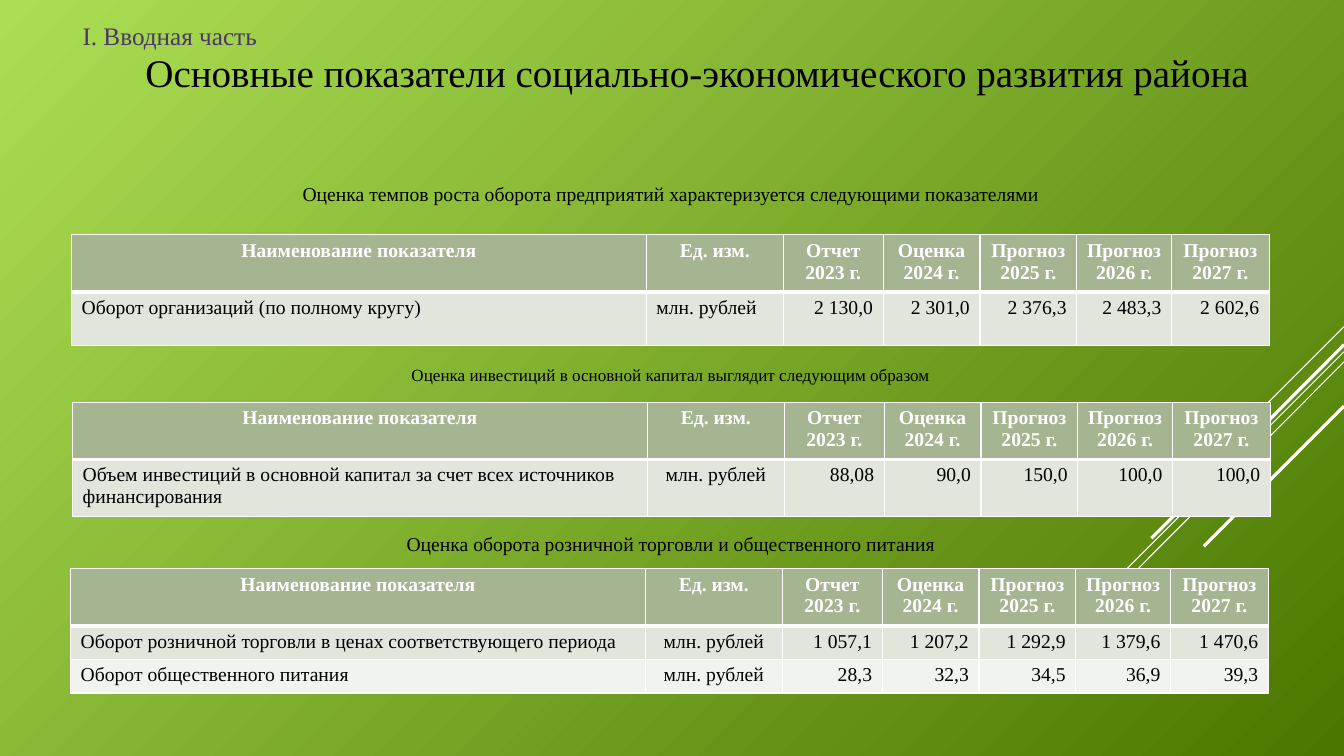
"""Build the slide with the main social and economic indicators of the district."""
from lxml.etree import SubElement
from pptx import Presentation
from pptx.dml.color import RGBColor
from pptx.enum.shapes import MSO_CONNECTOR
from pptx.enum.text import MSO_ANCHOR, PP_ALIGN as Align
from pptx.oxml.ns import qn
from pptx.util import Inches, Pt

LIME = RGBColor(0xAC, 0xDE, 0x54)
DARK_GREEN = RGBColor(0x4B, 0x77, 0x00)
WHITE = RGBColor(0xFF, 0xFF, 0xFF)
BLACK = RGBColor(0x00, 0x00, 0x00)
PURPLE = RGBColor(0x4C, 0x37, 0x6B)
HEADER_FILL = RGBColor(0xA5, 0xB5, 0x92)
BAND_FILLS = [RGBColor(0xE1, 0xE5, 0xDC), RGBColor(0xF0, 0xF3, 0xEE)]

THIN, THICK = 0.96, 3
COLUMN_WIDTHS = [5.7, 1.36, 0.99, 0.96, 0.96, 0.94, 0.97]
HEADERS = ["Наименование показателя", "Ед. изм.", "Отчет 2023 г.", "Оценка\n2024 г.",
           "Прогноз\n2025 г.", "Прогноз\n2026 г.", "Прогноз 2027 г."]
UNIT = "млн. рублей"


def write(frame, text, font_format, para_format):
    frame.word_wrap = True
    for index, line in enumerate(text.split("\n")):
        para = frame.paragraphs[0] if index == 0 else frame.add_paragraph()
        for name, value in para_format.items():
            setattr(para, name, value)
        span = para.add_run()
        span.text = line
        span.font.name = "Times New Roman"
        span.font.color.rgb = font_format["color"]
        span.font.size = Pt(font_format["size"])
        span.font.bold = font_format.get("bold", False)


def add_borders(cell, widths):
    properties = cell._tc.get_or_add_tcPr()
    for side, width in widths.items():
        border = SubElement(properties, qn(f"a:ln{side}"), w=str(int(Pt(width))))
        fill = SubElement(border, qn("a:solidFill"))
        SubElement(fill, qn("a:srgbClr"), val=str(WHITE))


deck = Presentation()
deck.slide_width, deck.slide_height = Inches(13.33), Inches(7.5)
page = deck.slides.add_slide(deck.slide_layouts[6])

backdrop = page.background.fill
backdrop.gradient()
backdrop.gradient_angle = 315
for stop, color, position in zip(backdrop.gradient_stops, [LIME, DARK_GREEN], [0, 1]):
    stop.color.rgb = color
    stop.position = position

RAYS = [(3.24, 12.33, 4.24, 0.75), (3.49, 10.07, 6.75, 0.75), (3.59, 11.26, 5.67, 0.75),
        (3.42, 11.42, 5.34, 2.25), (4.03, 11.94, 5.42, 2.25)]
for start_y, end_x, end_y, width in RAYS:
    ray = page.shapes.add_connector(MSO_CONNECTOR.STRAIGHT, Inches(13.33), Inches(start_y),
                                    Inches(end_x), Inches(end_y))
    ray.line.color.rgb = WHITE
    ray.line.width = Pt(width)
    SubElement(ray._element.spPr, qn("a:effectLst"))

SECTION = {"alignment": Align.LEFT}
TITLE = {"alignment": Align.CENTER, "line_spacing": 0.8, "space_before": Pt(6)}
CAPTION = {"alignment": Align.CENTER, "line_spacing": 0.9, "space_before": Pt(6)}
TEXTS = [
    ("I. Вводная часть", 0.72, 0.19, 0.32, 0.1, 18, PURPLE, SECTION),
    ("Основные показатели социально-экономического развития района",
     0.72, 0.52, 0.62, 0.6, 27.9, BLACK, TITLE),
    ("Оценка темпов роста оборота предприятий характеризуется следующими показателями",
     0.71, 1.78, 0.32, 0.1, 14, BLACK, CAPTION),
    ("Оценка инвестиций в основной капитал выглядит следующим образом",
     0.71, 3.59, 0.28, 0.1, 12.2, BLACK, CAPTION),
    ("Оценка оборота розничной торговли и общественного питания",
     0.71, 5.25, 0.32, 0.1, 14, BLACK, CAPTION),
]
for text, left, top, height, margin, size, color, para_format in TEXTS:
    box = page.shapes.add_textbox(Inches(left), Inches(top), Inches(11.89), Inches(height))
    box.text_frame.margin_left = Inches(margin)
    if para_format is SECTION:
        box.text_frame.vertical_anchor = MSO_ANCHOR.MIDDLE
    write(box.text_frame, text, {"size": size, "color": color}, para_format)

TABLES = [
    (0.71, 2.33, 0.53, Align.LEFT, [
        ["Оборот организаций (по полному кругу)", UNIT,
         "2 130,0", "2 301,0", "2 376,3", "2 483,3", "2 602,6"]]),
    (0.72, 3.99, 0.53, Align.CENTER, [
        ["Объем инвестиций в основной капитал за счет всех источников финансирования", UNIT,
         "88,08", "90,0", "150,0", "100,0", "100,0"]]),
    (0.7, 5.64, 0.32, Align.CENTER, [
        ["Оборот розничной торговли в ценах соответствующего периода", UNIT,
         "1 057,1", "1 207,2", "1 292,9", "1 379,6", "1 470,6"],
        ["Оборот общественного питания", UNIT, "28,3", "32,3", "34,5", "36,9", "39,3"]]),
]
for left, top, row_height, unit_align, records in TABLES:
    rows = [HEADERS] + records
    height = 0.53 + row_height * len(records)
    table = page.shapes.add_table(len(rows), len(COLUMN_WIDTHS), Inches(left), Inches(top),
                                  Inches(11.89), Inches(height)).table
    table.horz_banding = False
    for column, width in zip(table.columns, COLUMN_WIDTHS):
        column.width = Inches(width)
    body_aligns = [Align.LEFT, unit_align] + [Align.RIGHT] * 5
    for row_index, row in enumerate(rows):
        is_header = row_index == 0
        table.rows[row_index].height = Inches(0.53 if is_header else row_height)
        borders = {"L": THIN, "R": THIN, "T": THICK if row_index == 1 else THIN,
                   "B": THICK if is_header else THIN}
        font_format = {"size": 14, "color": WHITE if is_header else BLACK, "bold": is_header}
        for column_index, text in enumerate(row):
            cell = table.cell(row_index, column_index)
            add_borders(cell, borders)
            cell.fill.solid()
            cell.fill.fore_color.rgb = HEADER_FILL if is_header else BAND_FILLS[row_index - 1]
            align = Align.CENTER if is_header else body_aligns[column_index]
            write(cell.text_frame, text, font_format, {"alignment": align})

deck.save("out.pptx")
